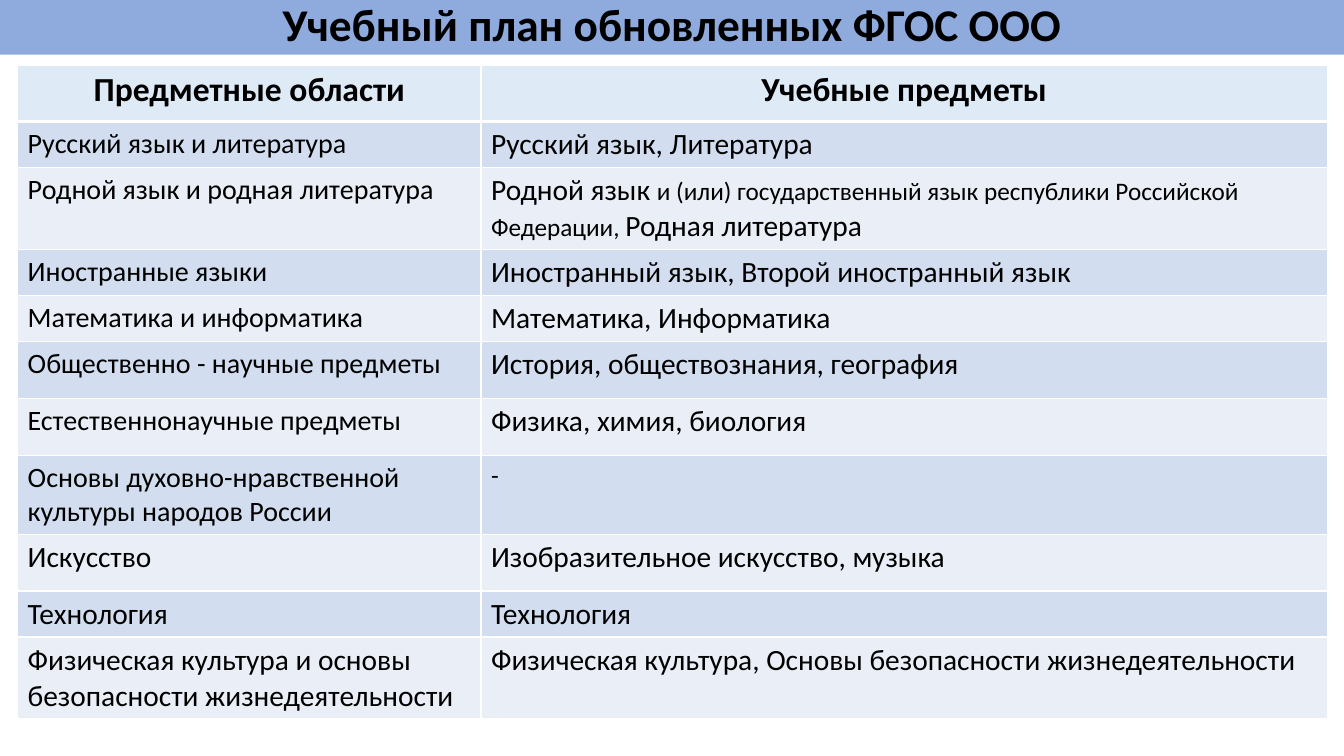
from lxml.etree import SubElement
from pptx import Presentation
from pptx.dml.color import RGBColor as RGB
from pptx.enum.shapes import MSO_SHAPE as SHAPE
from pptx.enum.text import MSO_ANCHOR as ANCHOR, PP_ALIGN as ALIGN
from pptx.oxml.ns import qn
from pptx.util import Pt

# Content: each row is area, area size, list of (subject text, size), row height
TITLE = "Учебный план обновленных ФГОС ООО"
HEADINGS = ("Предметные области", "Учебные предметы")
PLAN = [
    ("Русский язык и литература", 20, [("Русский язык, Литература", 21)], 32.8),
    ("Родной язык и родная литература", 20, [
        ("Родной язык ", 21),
        ("и (или) государственный язык республики Российской Федерации, ", 18),
        ("Родная литература", 21)], 58.5),
    ("Иностранные языки", 20, [("Иностранный язык, Второй иностранный язык", 21)], 32.8),
    ("Математика и информатика", 20, [("Математика, Информатика", 21)], 32.8),
    ("Общественно - научные предметы", 20, [("История, обществознания, география", 21)], 40.6),
    ("Естественнонаучные предметы", 20, [("Физика, химия, биология", 21)], 40.6),
    ("Основы духовно-нравственной культуры народов России", 20, [("-", 18)], 55.8),
    ("Искусство", 21, [("Изобразительное искусство, музыка", 21)], 40.6),
    ("Технология", 21, [("Технология", 21)], 32.8),
    ("Физическая культура и основы безопасности жизнедеятельности", 21,
     [("Физическая культура, Основы безопасности жизнедеятельности", 21)], 58.5),
]

THEME = {
    "font": "Calibri", "text": "000000", "banner": "8FAADC", "header": "DEEBF7",
    "bands": ("D2DEEF", "EAEFF7"), "border": "FFFFFF",
    "title_size": 32.4, "header_size": 24, "border_width": 1, "header_rule": 3,
}

# Layout in points
SLIDE_W, SLIDE_H = 960, 540
BANNER_H = 39
TABLE_LEFT, TABLE_TOP = 12.6, 46.4
COLUMNS = (331, 604.6)
HEADER_H = 40.4


def write(paragraph, pieces, bold=False, align=ALIGN.LEFT):
    paragraph.alignment = align
    for words, size in pieces:
        run = paragraph.add_run()
        run.text = words
        run.font.name = THEME["font"]
        run.font.size = Pt(size)
        run.font.bold = bold
        run.font.color.rgb = RGB.from_string(THEME["text"])


def add_borders(cell, top, bottom):
    properties = cell._tc.get_or_add_tcPr()
    thin = THEME["border_width"]
    for side, width in (("L", thin), ("R", thin), ("T", top), ("B", bottom)):
        line = SubElement(properties, qn("a:ln" + side), w=str(Pt(width)))
        fill = SubElement(line, qn("a:solidFill"))
        SubElement(fill, qn("a:srgbClr"), val=THEME["border"])


def paint(target, color):
    target.fill.solid()
    target.fill.fore_color.rgb = RGB.from_string(color)


deck = Presentation()
deck.slide_width, deck.slide_height = Pt(SLIDE_W), Pt(SLIDE_H)
slide = deck.slides.add_slide(deck.slide_layouts[6])

# Title banner
banner = slide.shapes.add_shape(SHAPE.RECTANGLE, 0, 0, Pt(SLIDE_W), Pt(BANNER_H))
banner.shadow.inherit = False
banner.line.fill.background()
paint(banner, THEME["banner"])
banner.text_frame.word_wrap = True
banner.text_frame.vertical_anchor = ANCHOR.MIDDLE
heading = banner.text_frame.paragraphs[0]
heading.line_spacing = 0.9
write(heading, [(TITLE, THEME["title_size"])], True, ALIGN.CENTER)

# Curriculum table
header = [[(name, THEME["header_size"])] for name in HEADINGS]
rows = [header] + [[[(area, size)], subjects] for area, size, subjects, _ in PLAN]
heights = [HEADER_H] + [row[-1] for row in PLAN]
curriculum = slide.shapes.add_table(
    len(rows), len(COLUMNS), Pt(TABLE_LEFT), Pt(TABLE_TOP),
    Pt(sum(COLUMNS)), Pt(sum(heights))).table
for column, width in zip(curriculum.columns, COLUMNS):
    column.width = Pt(width)

for r, (entries, height) in enumerate(zip(rows, heights)):
    curriculum.rows[r].height = Pt(height)
    is_header = r == 0
    top = THEME["header_rule"] if r == 1 else THEME["border_width"]
    bottom = THEME["header_rule"] if is_header else THEME["border_width"]
    color = THEME["header"] if is_header else THEME["bands"][(r - 1) % 2]
    for c, pieces in enumerate(entries):
        cell = curriculum.cell(r, c)
        add_borders(cell, top, bottom)
        paint(cell, color)
        write(cell.text_frame.paragraphs[0], pieces, is_header,
              ALIGN.CENTER if is_header else ALIGN.LEFT)

deck.save("out.pptx")
